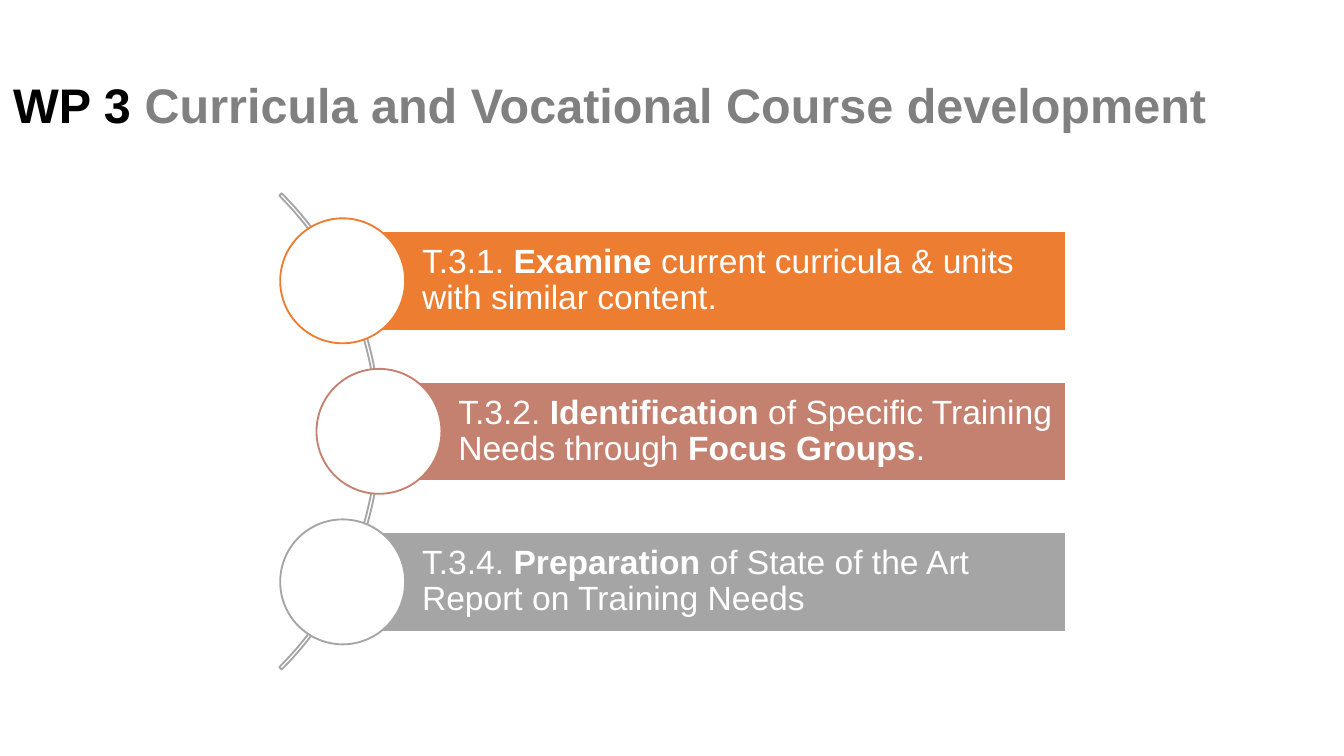
"""Build the WP 3 slide: a title and three tasks along an arc."""
from pptx import Presentation
from pptx.dml.color import RGBColor
from pptx.enum.shapes import MSO_SHAPE
from pptx.enum.text import MSO_ANCHOR, PP_ALIGN
from pptx.util import Inches, Pt

ARC, BAR, CIRCLE = MSO_SHAPE.BLOCK_ARC, MSO_SHAPE.RECTANGLE, MSO_SHAPE.OVAL
TOP, MIDDLE, LEFT = MSO_ANCHOR.TOP, MSO_ANCHOR.MIDDLE, PP_ALIGN.LEFT

THEME = {
    "font": "Arial", "title_size": 26, "task_size": 18, "line_width": 1, "line_spacing": 0.9,
    "black": "000000", "title_gray": "808080", "white": "FFFFFF",
    "orange": "ED7D31", "rose": "C48170", "gray": "A5A5A5",
}

TITLE = [("WP 3 ", True, "black"),
         ("Curricula and Vocational Course development", True, "title_gray")]
TASKS = [
    {"color": "orange", "indent": 0,
     "text": [("T.3.1. ", False), ("Examine ", True),
              ("current curricula & units with similar content.", False)]},
    {"color": "rose", "indent": 0.27,
     "text": [("T.3.2. ", False), ("Identification", True),
              (" of Specific Training Needs through ", False),
              ("Focus Groups", True), (".", False)]},
    {"color": "gray", "indent": 0,
     "text": [("T.3.4. ", False), ("Preparation", True),
              (" of State of the Art Report on Training Needs", False)]},
]

SLIDE_WIDTH = 10
SLIDE_HEIGHT = SLIDE_WIDTH * 9 / 16
TITLE_BOX = (0, 0.56, 9.67, 0.83)
ARC_LEFT, ARC_SIZE, ARC_ADJUSTMENTS = -2.18, 5.01, (189, 27, 0.005)
AXIS_LEFT, BAR_RIGHT, MIDDLE_Y, ROW_PITCH = 2.55, 7.93, 3.21, 1.12
BAR_HEIGHT, CIRCLE_SIZE = 0.74, 0.93
TITLE_INSETS, BAR_INSETS = (0.1, 0.05, 0.1, 0.05), (0.59, 0.05, 0.05, 0.05)


def theme_color(name):
    return RGBColor.from_string(THEME[name])


def add_shape(slide, kind, box, fill, line):
    shape = slide.shapes.add_shape(kind, *map(Inches, box))
    shape.shadow.inherit = False
    if fill:
        shape.fill.solid()
        shape.fill.fore_color.rgb = theme_color(fill)
    else:
        shape.fill.background()
    shape.line.color.rgb = theme_color(line)
    shape.line.width = Pt(THEME["line_width"])
    return shape


def write_text(shape, runs, size, insets, anchor):
    frame = shape.text_frame
    frame.word_wrap = True
    frame.vertical_anchor = anchor
    (frame.margin_left, frame.margin_top,
     frame.margin_right, frame.margin_bottom) = map(Inches, insets)
    paragraph = frame.paragraphs[0]
    paragraph.alignment = LEFT
    paragraph.line_spacing = THEME["line_spacing"]
    for text, bold, color in runs:
        run = paragraph.add_run()
        run.text = text
        run.font.name = THEME["font"]
        run.font.size = Pt(THEME[size])
        run.font.bold = bold
        run.font.color.rgb = theme_color(color)


def add_task(slide, row, task):
    center_x = AXIS_LEFT + task["indent"]
    center_y = MIDDLE_Y + (row - (len(TASKS) - 1) / 2) * ROW_PITCH
    bar_box = (center_x, center_y - BAR_HEIGHT / 2, BAR_RIGHT - center_x, BAR_HEIGHT)
    bar = add_shape(slide, BAR, bar_box, task["color"], "white")
    runs = [(text, bold, "white") for text, bold in task["text"]]
    write_text(bar, runs, "task_size", BAR_INSETS, MIDDLE)
    circle_box = (center_x - CIRCLE_SIZE / 2, center_y - CIRCLE_SIZE / 2,
                  CIRCLE_SIZE, CIRCLE_SIZE)
    add_shape(slide, CIRCLE, circle_box, "white", task["color"])


def main():
    presentation = Presentation()
    presentation.slide_width = Inches(SLIDE_WIDTH)
    presentation.slide_height = Inches(SLIDE_HEIGHT)
    slide = presentation.slides.add_slide(presentation.slide_layouts[6])

    title = slide.shapes.add_textbox(*map(Inches, TITLE_BOX))
    write_text(title, TITLE, "title_size", TITLE_INSETS, TOP)

    arc_box = (ARC_LEFT, MIDDLE_Y - ARC_SIZE / 2, ARC_SIZE, ARC_SIZE)
    arc = add_shape(slide, ARC, arc_box, None, "gray")
    for index, value in enumerate(ARC_ADJUSTMENTS):
        arc.adjustments[index] = value

    for row, task in enumerate(TASKS):
        add_task(slide, row, task)
    presentation.save("out.pptx")


if __name__ == "__main__":
    main()
